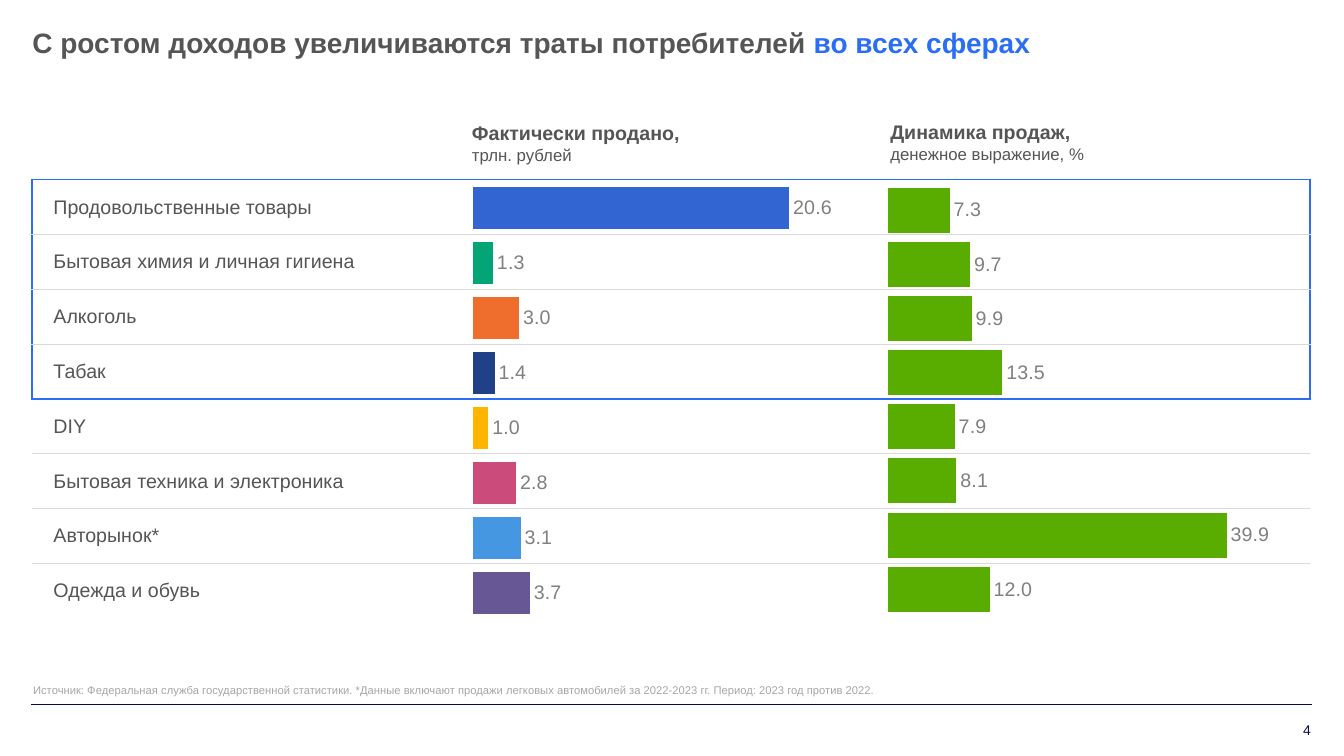
from dataclasses import dataclass

from lxml import etree
from pptx import Presentation
from pptx.chart.data import CategoryChartData
from pptx.dml.color import RGBColor
from pptx.enum.chart import XL_CHART_TYPE, XL_LABEL_POSITION
from pptx.enum.shapes import MSO_CONNECTOR
from pptx.enum.text import MSO_ANCHOR, PP_ALIGN
from pptx.oxml import parse_xml
from pptx.oxml.ns import nsdecls, qn
from pptx.util import Inches, Pt

BAR_CLUSTERED = XL_CHART_TYPE.BAR_CLUSTERED
OUTSIDE_END = XL_LABEL_POSITION.OUTSIDE_END
STRAIGHT = MSO_CONNECTOR.STRAIGHT
TOP, MIDDLE = MSO_ANCHOR.TOP, MSO_ANCHOR.MIDDLE
LEFT, RIGHT = PP_ALIGN.LEFT, PP_ALIGN.RIGHT


@dataclass(frozen=True)
class Theme:
    font: str = "Arial"
    text: str = "555555"
    accent: str = "2C6DF6"
    navy: str = "060A45"
    rule: str = "D9D9D9"
    label: str = "808080"
    source: str = "A6A6A6"
    growth: str = "59AD00"
    title_size: int = 20
    body_size: int = 14
    unit_size: int = 12
    number_size: int = 10
    source_size: int = 8


THEME = Theme()


@dataclass(frozen=True)
class Segment:
    name: str
    sold: float
    growth: float
    color: str


@dataclass(frozen=True)
class Style:
    size: int
    color: str
    bold: bool = False


@dataclass(frozen=True)
class TextBlock:
    box: tuple[float, float, float, float]
    text: str
    styles: tuple[Style, ...]
    anchor: MSO_ANCHOR = TOP
    align: PP_ALIGN = LEFT
    inset: float = 0


@dataclass(frozen=True)
class BarPanel:
    box: tuple[float, float, float, float]
    plot: tuple[float, float, float, float]
    categories: list[str]
    series: list[tuple[str, list[float], str]]
    maximum: float
    gap: int
    overlap: int = 0
    reverse: bool = False


SEGMENTS = [
    Segment("Продовольственные товары", 20.6, 7.3, "3265D2"),
    Segment("Бытовая химия и личная гигиена", 1.3, 9.7, "03A577"),
    Segment("Алкоголь", 3.0, 9.9, "F06E2D"),
    Segment("Табак", 1.4, 13.5, "204188"),
    Segment("DIY", 1.0, 7.9, "FFB500"),
    Segment("Бытовая техника и электроника", 2.8, 8.1, "CB4B7A"),
    Segment("Авторынок*", 3.1, 39.9, "4697E2"),
    Segment("Одежда и обувь", 3.7, 12.0, "675895"),
]
FRAMED_ROWS = 4
TABLE_BOX = (0.32, 1.78, 12.67, 4.35)

HEADING = (Style(THEME.body_size, THEME.text, True), Style(THEME.unit_size, THEME.text))
TEXT_BLOCKS = [
    TextBlock((4.68, 1.15, 2.29, 0.43), "Фактически продано,\vтрлн. рублей", HEADING),
    TextBlock((8.83, 1.14, 2.29, 0.43), "Динамика продаж,\vденежное выражение, %", HEADING),
    TextBlock((0.23, 6.73, 12.67, 0.4),
              "Источник: Федеральная служба государственной статистики. *Данные включают "
              "продажи легковых автомобилей за 2022-2023 гг. Период: 2023 год против 2022.",
              (Style(THEME.source_size, THEME.source),), inset=0.1),
    TextBlock((12.01, 7.04, 0.99, 0.4), "4", (Style(THEME.number_size, THEME.navy),),
              MIDDLE, RIGHT),
]
PANELS = [
    BarPanel((8.54, 1.15, 4.06, 5.13), (0.065, 0.13, 0.934, 0.838),
             [s.name for s in SEGMENTS],
             [("Динамика продаж", [s.growth for s in SEGMENTS], THEME.growth)],
             maximum=45, gap=20, reverse=True),
    BarPanel((4.64, 0.96, 4.01, 5.63), (0.013, 0.138, 0.949, 0.794),
             ["Фактически продано"],
             [(s.name, [s.sold], s.color) for s in reversed(SEGMENTS)],
             maximum=25, gap=55, overlap=-30),
]


def format_font(font, style: Style) -> None:
    font.name = THEME.font
    font.size = Pt(style.size)
    font.bold = style.bold
    font.color.rgb = RGBColor.from_string(style.color)


def add_title(slide) -> None:
    title = slide.shapes.title
    title.left, title.top, title.width, title.height = map(Inches, (0.32, 0.2, 12.67, 0.43))
    frame = title.text_frame
    frame.vertical_anchor = TOP
    frame.margin_left = frame.margin_right = 0
    frame.text = "С ростом доходов увеличиваются траты потребителей "
    paragraph = frame.paragraphs[0]
    paragraph.alignment = LEFT
    paragraph.add_run().text = "во всех сферах"
    for run, color in zip(paragraph.runs, (THEME.text, THEME.accent)):
        format_font(run.font, Style(THEME.title_size, color, True))


def add_text(slide, block: TextBlock) -> None:
    frame = slide.shapes.add_textbox(*map(Inches, block.box)).text_frame
    frame.word_wrap = True
    frame.vertical_anchor = block.anchor
    frame.margin_left = frame.margin_right = Inches(block.inset)
    paragraph = frame.paragraphs[0]
    paragraph.text = block.text
    paragraph.alignment = block.align
    for run, style in zip(paragraph.runs, block.styles):
        format_font(run.font, style)


def set_border(cell, side: str, color: str | None, width: float = 0.5) -> None:
    line = etree.SubElement(cell._tc.get_or_add_tcPr(), qn(f"a:ln{side}"), w=str(Pt(width)))
    if color is None:
        etree.SubElement(line, qn("a:noFill"))
    else:
        fill = etree.SubElement(line, qn("a:solidFill"))
        etree.SubElement(fill, qn("a:srgbClr"), val=color)


def add_segment_table(slide) -> None:
    count = len(SEGMENTS)
    table = slide.shapes.add_table(count, 1, *map(Inches, TABLE_BOX)).table
    table.first_row = table.horz_banding = False
    blue, grey, none = (THEME.accent, 1.5), (THEME.rule, 0.5), (None,)
    # Horizontal edges from the top of the table to its bottom
    edges = [blue if i in (0, FRAMED_ROWS) else grey for i in range(count)] + [none]
    for i, segment in enumerate(SEGMENTS):
        cell = table.cell(i, 0)
        cell.text_frame.text = segment.name
        format_font(cell.text_frame.paragraphs[0].runs[0].font,
                    Style(THEME.body_size, THEME.text))
        cell.vertical_anchor = MIDDLE
        cell.margin_left, cell.margin_right = Inches(0.21), Inches(0.01)
        cell.margin_top, cell.margin_bottom = Inches(0.01), 0
        flank = blue if i < FRAMED_ROWS else none
        for side, border in zip("LRTB", (flank, flank, edges[i], edges[i + 1])):
            set_border(cell, side, *border)
        cell.fill.background()


def set_plot_area(chart, plot: tuple[float, float, float, float]) -> None:
    area = chart._chartSpace.chart.plotArea
    for layout in area.findall(qn("c:layout")):
        area.remove(layout)
    sizes = "".join(f'<c:{key} val="{value}"/>' for key, value in zip("xywh", plot))
    area.insert(0, parse_xml(
        f'<c:layout {nsdecls("c")}><c:manualLayout><c:layoutTarget val="inner"/>'
        f'<c:xMode val="edge"/><c:yMode val="edge"/>{sizes}</c:manualLayout></c:layout>'))


def add_bars(slide, panel: BarPanel) -> None:
    data = CategoryChartData(number_format="0.0")
    data.categories = panel.categories
    for name, values, _ in panel.series:
        data.add_series(name, values)
    chart = slide.shapes.add_chart(BAR_CLUSTERED, *map(Inches, panel.box), data).chart
    chart.has_title = chart.has_legend = False
    format_font(chart.font, Style(THEME.number_size, THEME.text))
    set_plot_area(chart, panel.plot)
    # Hidden axes
    chart.category_axis.visible = chart.value_axis.visible = False
    chart.category_axis.reverse_order = panel.reverse
    chart.value_axis.has_major_gridlines = False
    chart.value_axis.minimum_scale, chart.value_axis.maximum_scale = 0, panel.maximum
    # Bars and their values
    bars = chart.plots[0]
    bars.vary_by_categories = False
    bars.gap_width, bars.overlap = panel.gap, panel.overlap
    for series, (_, _, color) in zip(bars.series, panel.series):
        series.invert_if_negative = False
        series.format.fill.solid()
        series.format.fill.fore_color.rgb = RGBColor.from_string(color)
        labels = series.data_labels
        labels.show_value = True
        labels.position = OUTSIDE_END
        labels.number_format, labels.number_format_is_linked = "0.0", False
        format_font(labels.font, Style(THEME.body_size, THEME.label))


def add_footer_rule(slide) -> None:
    rule = slide.shapes.add_connector(STRAIGHT, *map(Inches, (0.31, 6.99, 13.01, 6.99)))
    rule.line.color.rgb = RGBColor.from_string(THEME.navy)
    rule.line.width = Pt(1)
    etree.SubElement(rule._element.spPr, qn("a:effectLst"))


def main() -> None:
    deck = Presentation()
    deck.slide_width, deck.slide_height = Inches(13.33), Inches(7.5)
    slide = deck.slides.add_slide(deck.slide_layouts[5])
    add_title(slide)
    add_footer_rule(slide)
    add_segment_table(slide)
    for panel in PANELS:
        add_bars(slide, panel)
    for block in TEXT_BLOCKS:
        add_text(slide, block)
    deck.save("out.pptx")


if __name__ == "__main__":
    main()
